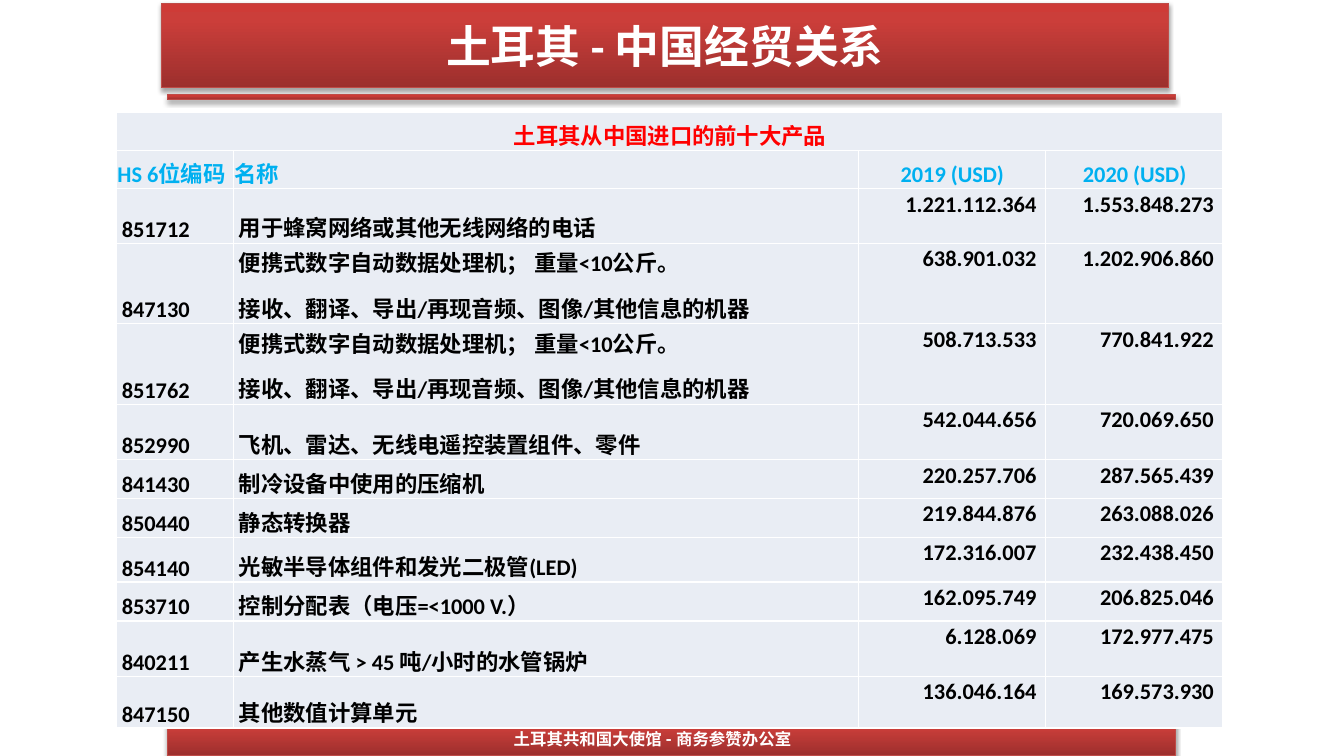
import dataclasses

import pptx
import pptx.dml.color
import pptx.enum.shapes
import pptx.enum.text
import pptx.oxml
import pptx.oxml.ns
import pptx.util

Cm, Pt = pptx.util.Cm, pptx.util.Pt
Align = pptx.enum.text.PP_ALIGN
Anchor = pptx.enum.text.MSO_ANCHOR


@dataclasses.dataclass(frozen=True)
class Theme:
    white: str = "FFFFFF"
    black: str = "000000"
    red: str = "FF0000"
    blue: str = "00B0F0"
    cell: str = "E9EDF4"
    edge: str = "BF4C48"
    grade: tuple = ((0, "9C2F2D"), (80, "CB3E3A"), (100, "CE3B37"))
    font: str = "Calibri"
    foot: str = "Roboto"
    title: float = 32
    body: float = 16
    small: float = 11.7


THEME = Theme()
COLS = (2.95, 15.74, 4.72, 4.47)
ROWS = (0.97, 0.97, 1.37, 2.03, 2.03, 1.4, 0.98, 0.98, 1.12, 0.98, 1.4, 1.3)
HEADS = ("HS 6位编码", "名称", "2019 (USD)", "2020 (USD)")
DEVICE = "便携式数字自动数据处理机； 重量<10公斤。\n接收、翻译、导出/再现音频、图像/其他信息的机器"
GOODS = (
    ("851712", "用于蜂窝网络或其他无线网络的电话", "1.221.112.364", "1.553.848.273"),
    ("847130", DEVICE, "638.901.032", "1.202.906.860"),
    ("851762", DEVICE, "508.713.533", "770.841.922"),
    ("852990", "飞机、雷达、无线电遥控装置组件、零件", "542.044.656", "720.069.650"),
    ("841430", "制冷设备中使用的压缩机", "220.257.706", "287.565.439"),
    ("850440", "静态转换器", "219.844.876", "263.088.026"),
    ("854140", "光敏半导体组件和发光二极管(LED)", "172.316.007", "232.438.450"),
    ("853710", "控制分配表（电压=<1000 V.）", "162.095.749", "206.825.046"),
    ("840211", "产生水蒸气 > 45 吨/小时的水管锅炉", "6.128.069", "172.977.475"),
    ("847150", "其他数值计算单元", "136.046.164", "169.573.930"),
)


def rgb(code):
    return pptx.dml.color.RGBColor.from_string(code)


def parse_xml(text):
    space = pptx.oxml.ns.nsdecls("a")
    return pptx.oxml.parse_xml(text.replace(">", f" {space}>", 1))


def write(frame, text, size, color, align, font=THEME.font):
    frame.text = text
    for para in frame.paragraphs:
        para.alignment = align
        para.font.name = font
        para.font.size = Pt(size)
        para.font.bold = True
        para.font.color.rgb = rgb(color)


# Red bar with a gradient and a soft shadow
def add_bar(slide, left, top, width, height):
    bar = slide.shapes.add_shape(
        pptx.enum.shapes.MSO_SHAPE.RECTANGLE,
        Cm(left), Cm(top), Cm(width), Cm(height))
    bar.line.color.rgb = rgb(THEME.edge)
    bar.line.width = Pt(0.75)
    stops = "".join(
        f'<a:gs pos="{place * 1000}"><a:srgbClr val="{code}"/></a:gs>'
        for place, code in THEME.grade)
    outline = bar.line._ln
    outline.addprevious(parse_xml(
        f'<a:gradFill><a:gsLst>{stops}</a:gsLst>'
        '<a:lin ang="16200000" scaled="0"/></a:gradFill>'))
    outline.addnext(parse_xml(
        '<a:effectLst><a:outerShdw blurRad="40000" dist="23000" dir="5400000"'
        f' rotWithShape="0"><a:srgbClr val="{THEME.black}">'
        '<a:alpha val="35000"/></a:srgbClr></a:outerShdw></a:effectLst>'))
    return bar


def add_label(slide, text, left, top, width, height):
    box = slide.shapes.add_textbox(Cm(left), Cm(top), Cm(width), Cm(height))
    frame = box.text_frame
    frame.word_wrap = True
    frame.vertical_anchor = Anchor.MIDDLE
    write(frame, text, THEME.small, THEME.white, Align.CENTER, THEME.foot)


# Table cells
def fill_cell(cell, text, color, align, anchor, left, top, right):
    cell.margin_left, cell.margin_right = Cm(left), Cm(right)
    cell.margin_top, cell.margin_bottom = Cm(top), 0
    cell.vertical_anchor = anchor
    write(cell.text_frame, text, THEME.body, color, align)


def style_cell(cell):
    cell.fill.solid()
    cell.fill.fore_color.rgb = rgb(THEME.cell)
    props = cell._tc.get_or_add_tcPr()
    for spot, side in enumerate("LRTB"):
        props.insert(spot, parse_xml(
            f'<a:ln{side} w="12700"><a:solidFill>'
            f'<a:srgbClr val="{THEME.white}"/></a:solidFill></a:ln{side}>'))


def head_cell(cell, text, color, align):
    fill_cell(cell, text, color, align, Anchor.BOTTOM, 0.02, 0.02, 0)


def body_cell(cell, text, money):
    align = Align.RIGHT if money else Align.LEFT
    anchor = Anchor.TOP if money else Anchor.BOTTOM
    right = 0.23 if money else 0.13
    fill_cell(cell, text, THEME.black, align, anchor, 0.13, 0, right)
    for para in cell.text_frame.paragraphs:
        para.line_spacing = 1.07
        para.space_after = Pt(8)


def add_goods(slide):
    table = slide.shapes.add_table(
        len(ROWS), len(COLS), Cm(2.94), Cm(2.82),
        Cm(sum(COLS)), Cm(sum(ROWS))).table
    for col, width in zip(table.columns, COLS):
        col.width = Cm(width)
    for row, height in zip(table.rows, ROWS):
        row.height = Cm(height)
    for cell in table.iter_cells():
        style_cell(cell)
    table.cell(0, 0).merge(table.cell(0, len(COLS) - 1))
    head_cell(table.cell(0, 0), "土耳其从中国进口的前十大产品", THEME.red, Align.CENTER)
    for col, text in enumerate(HEADS):
        align = Align.CENTER if col > 1 else Align.LEFT
        head_cell(table.cell(1, col), text, THEME.blue, align)
    for row, goods in enumerate(GOODS, 2):
        for col, text in enumerate(goods):
            body_cell(table.cell(row, col), text, col > 1)


def main():
    deck = pptx.Presentation()
    deck.slide_width, deck.slide_height = Cm(33.87), Cm(19.05)
    slide = deck.slides.add_slide(deck.slide_layouts[6])

    # Title and rule
    title = add_bar(slide, 4.06, 0.08, 25.4, 2.13)
    title.text_frame.vertical_anchor = Anchor.MIDDLE
    write(title.text_frame, "土耳其 - 中国经贸关系",
          THEME.title, THEME.white, Align.CENTER)
    add_bar(slide, 4.22, 2.39, 25.4, 0.13)

    # Footer
    add_bar(slide, 4.22, 18.14, 25.4, 0.91)
    add_label(slide, "土耳其共和国大使馆 - 商务参赞办公室", 7.62, 18.21, 17.65, 0.84)

    # Imports
    add_goods(slide)
    deck.save("out.pptx")


if __name__ == "__main__":
    main()
